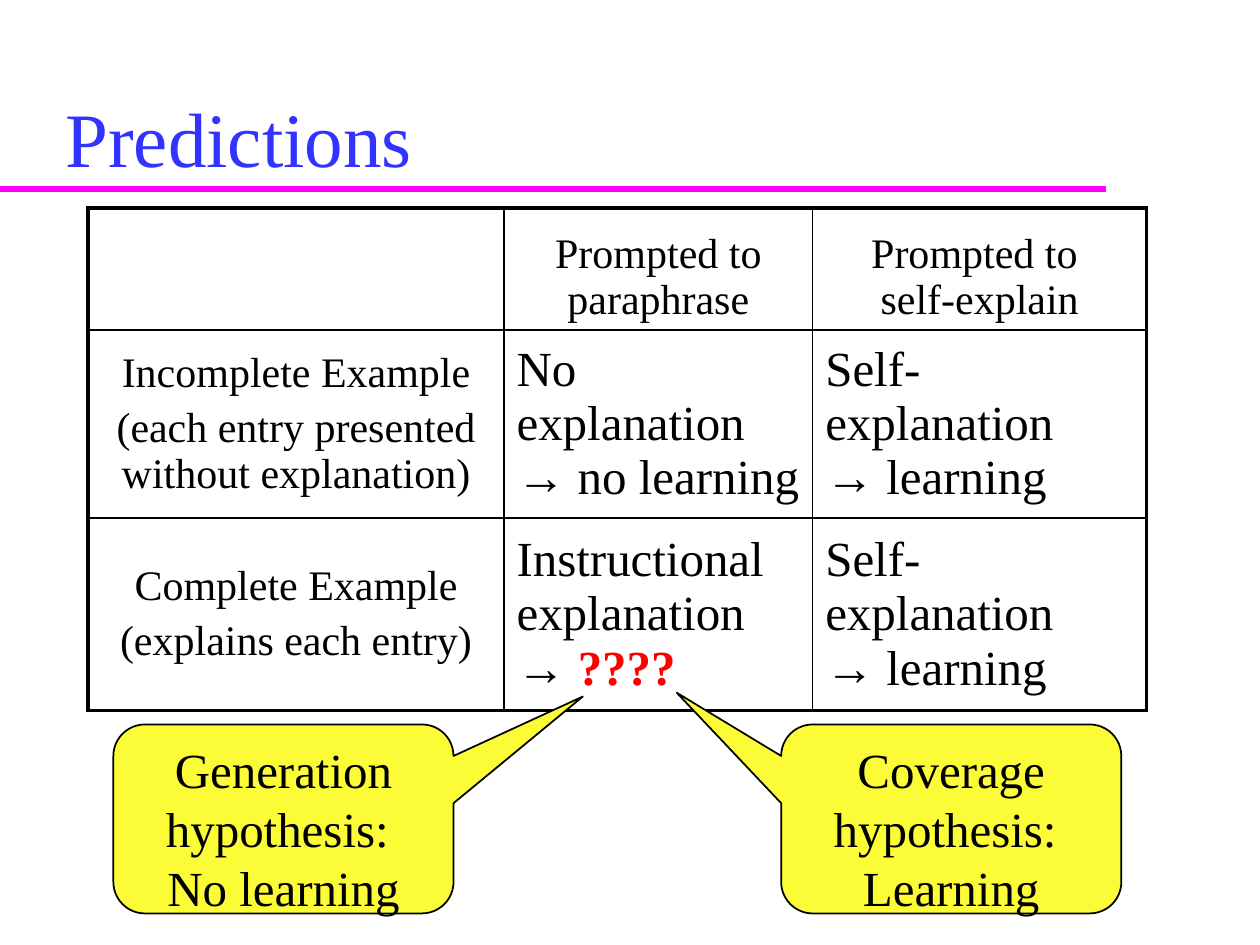
from lxml import etree
from pptx import Presentation
from pptx import util as u
from pptx.dml.color import RGBColor
from pptx.enum import shapes, text
from pptx.oxml.ns import qn

Pt = u.Pt
FONT = "Times New Roman"
COLORS = {"title": "3333FF", "rule": "FF00FF", "ink": "000000",
          "doubt": "FF0000", "callout": "FBFB37"}

HEADING = "Predictions"
PREDICTIONS = [
    [[], ["Prompted to paraphrase"], ["Prompted to \vself-explain"]],
    [["Incomplete Example", "(each entry presented without explanation)"],
     ["No explanation → no learning"],
     ["Self-explanation\v→ learning"]],
    [["Complete Example", "(explains each entry)"],
     ["Instructional explanation → "],
     ["Self-explanation\v→ learning"]],
]
OPEN_QUESTION = (2, 1, "????")
COLUMN_WIDTHS = [237.6, 176.4, 190.8]
ROW_HEIGHTS = [69.84, 107.28, 110.16]
TABLE_LEFT, TABLE_TOP = 50.4, 118.8
THICK, THIN = 2.25, 1

HYPOTHESES = [
    ("Generation hypothesis: \vNo learning", 64.8, (0.88, -0.648, 0.167)),
    ("Coverage hypothesis: \vLearning", 446.4, (-0.807, -0.668, 0.167)),
]
CALLOUT_TOP, CALLOUT_WIDTH, CALLOUT_HEIGHT = 414, 194.4, 108


def rgb(name):
    return RGBColor.from_string(COLORS[name])


def format_font(font, size, color, bold=False):
    font.name = FONT
    font.size = Pt(size)
    font.bold = bold
    font.color.rgb = rgb(color)


def write(frame, paragraphs, *, size, color="ink", align=text.PP_ALIGN.LEFT, gap=0):
    for index, wording in enumerate(paragraphs):
        paragraph = frame.add_paragraph() if index else frame.paragraphs[0]
        paragraph.text = wording
        paragraph.alignment = align
        paragraph.space_before = Pt(gap if index else 0)
        for run in paragraph.runs:
            format_font(run.font, size, color)


def add_borders(cell, widths):
    properties = cell._tc.get_or_add_tcPr()
    for index, (side, width) in enumerate(zip("LRTB", widths)):
        border = etree.Element(qn(f"a:ln{side}"), w=str(int(Pt(width))))
        fill = etree.SubElement(border, qn("a:solidFill"))
        etree.SubElement(fill, qn("a:srgbClr"), val=COLORS["ink"])
        properties.insert(index, border)


def add_heading(slide):
    rule = slide.shapes.add_connector(
        shapes.MSO_CONNECTOR.STRAIGHT, Pt(0), Pt(108), Pt(632.16), Pt(108))
    rule.line.color.rgb = rgb("rule")
    rule.line.width = Pt(4)
    etree.SubElement(rule._element.spPr, qn("a:effectLst"))

    title = slide.shapes.title
    title.left, title.top, title.width, title.height = map(Pt, (30.24, 20.88, 612, 87.12))
    title.text_frame.vertical_anchor = text.MSO_ANCHOR.BOTTOM
    write(title.text_frame, [HEADING], size=44, color="title")


def add_predictions(slide):
    last_row, last_column = len(ROW_HEIGHTS) - 1, len(COLUMN_WIDTHS) - 1
    table = slide.shapes.add_table(
        len(ROW_HEIGHTS), len(COLUMN_WIDTHS), Pt(TABLE_LEFT), Pt(TABLE_TOP),
        Pt(sum(COLUMN_WIDTHS)), Pt(sum(ROW_HEIGHTS))).table
    table.first_row = table.horz_banding = False
    for column, width in zip(table.columns, COLUMN_WIDTHS):
        column.width = Pt(width)
    for row, height in zip(table.rows, ROW_HEIGHTS):
        row.height = Pt(height)

    for r, entries in enumerate(PREDICTIONS):
        for c, paragraphs in enumerate(entries):
            cell = table.cell(r, c)
            cell.fill.background()
            outer = (c == 0, c == last_column, r == 0, r == last_row)
            add_borders(cell, [THICK if edge else THIN for edge in outer])
            cell.vertical_anchor = text.MSO_ANCHOR.MIDDLE if r else text.MSO_ANCHOR.BOTTOM
            if r and c:
                write(cell.text_frame, paragraphs, size=28)
            else:
                write(cell.text_frame, paragraphs, size=24,
                      align=text.PP_ALIGN.CENTER, gap=4.8)

    r, c, question = OPEN_QUESTION
    doubt = table.cell(r, c).text_frame.paragraphs[0].add_run()
    doubt.text = question
    format_font(doubt.font, 28, "doubt", bold=True)


def add_hypotheses(slide):
    for wording, left, adjustments in HYPOTHESES:
        callout = slide.shapes.add_shape(
            shapes.MSO_SHAPE.ROUNDED_RECTANGULAR_CALLOUT,
            Pt(left), Pt(CALLOUT_TOP), Pt(CALLOUT_WIDTH), Pt(CALLOUT_HEIGHT))
        for index, value in enumerate(adjustments):
            callout.adjustments[index] = value
        callout.shadow.inherit = False
        callout.fill.solid()
        callout.fill.fore_color.rgb = rgb("callout")
        callout.line.color.rgb = rgb("ink")
        callout.line.width = Pt(1)
        callout.text_frame.word_wrap = True
        callout.text_frame.vertical_anchor = text.MSO_ANCHOR.TOP
        write(callout.text_frame, [wording], size=28, align=text.PP_ALIGN.CENTER)


def main():
    presentation = Presentation()
    presentation.slide_width, presentation.slide_height = Pt(720), Pt(540)
    slide = presentation.slides.add_slide(presentation.slide_layouts[5])
    add_heading(slide)
    add_predictions(slide)
    add_hypotheses(slide)
    presentation.save("out.pptx")


if __name__ == "__main__":
    main()
